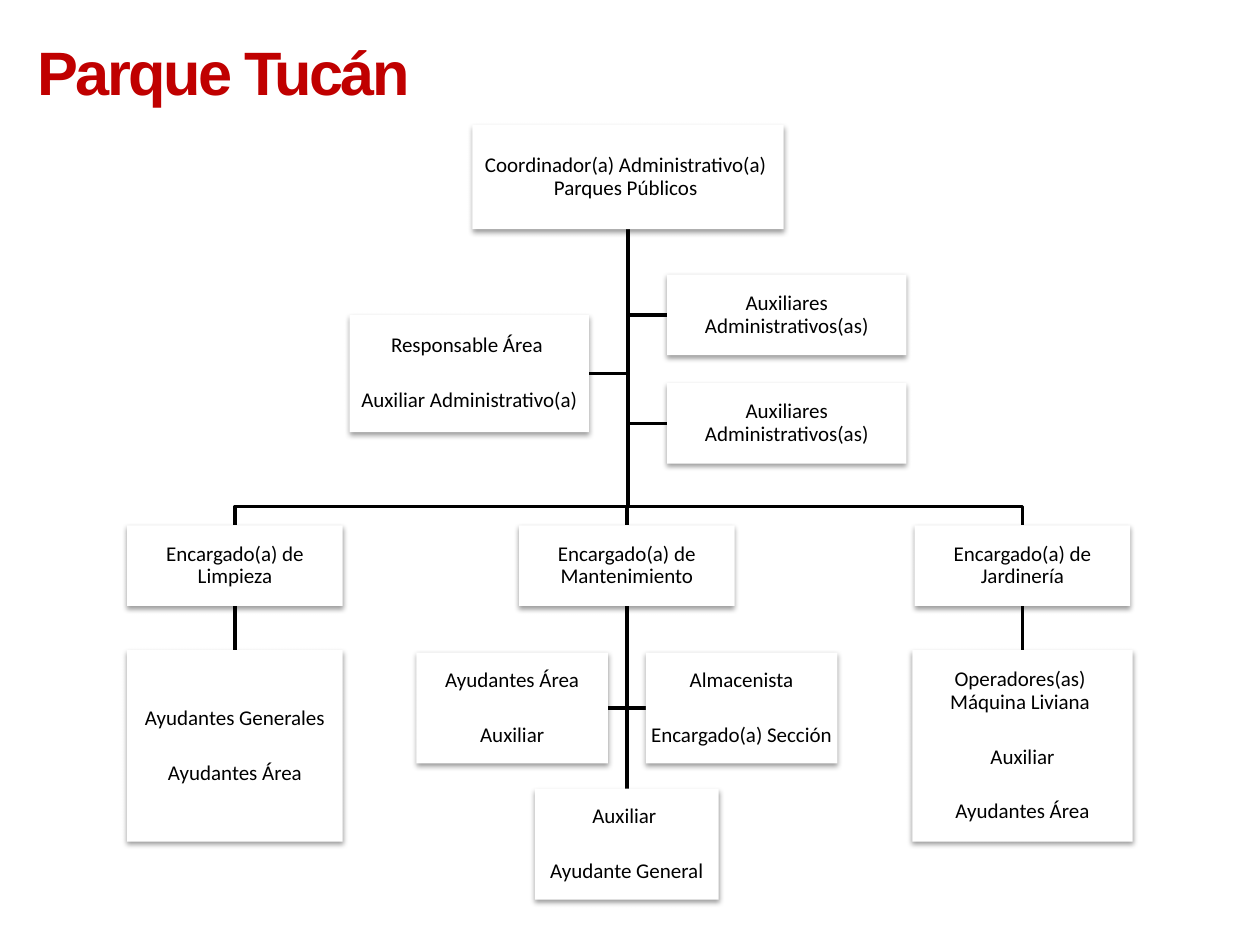
from dataclasses import dataclass

from lxml import etree
from pptx import Presentation
from pptx.dml.color import RGBColor
from pptx.enum.shapes import MSO_CONNECTOR, MSO_SHAPE
from pptx.enum.text import MSO_ANCHOR, PP_ALIGN
from pptx.oxml import parse_xml
from pptx.oxml.ns import nsdecls, qn
from pptx.util import Inches, Pt

RECT = MSO_SHAPE.RECTANGLE
LINE = MSO_CONNECTOR.STRAIGHT
MIDDLE = MSO_ANCHOR.MIDDLE
CENTER = PP_ALIGN.CENTER


@dataclass(frozen=True)
class Theme:
    red: RGBColor = RGBColor(0xC0, 0x00, 0x00)
    ink: RGBColor = RGBColor(0x00, 0x00, 0x00)
    paper: RGBColor = RGBColor(0xFF, 0xFF, 0xFF)
    head: Pt = Pt(35)
    body: Pt = Pt(12)
    rule: Pt = Pt(2)
    gap: Pt = Pt(18.3)


THEME = Theme()
ROOT = (3.75, 0.99, 2.47, 0.83)
BUS = 4.02
TOP = 4.17
SHADE = (
    f'<a:effectLst {nsdecls("a")}>'
    '<a:outerShdw blurRad="39400" dist="20300" dir="5400000" rotWithShape="0">'
    '<a:srgbClr val="000000"><a:alpha val="38000"/></a:srgbClr>'
    '</a:outerShdw></a:effectLst>'
)


def title(slide, box, text):
    frame = slide.shapes.add_textbox(*map(Inches, box)).text_frame
    frame.word_wrap = True
    frame.text = text
    run = frame.paragraphs[0].runs[0]
    run.font.name = "Arial"
    run.font.size = THEME.head
    run.font.bold = True
    run.font.color.rgb = THEME.red
    run._r.get_or_add_rPr().set("spc", "-150")


def ink(line):
    line.color.rgb = THEME.ink
    line.width = THEME.rule


def link(slide, *ends):
    line = slide.shapes.add_connector(LINE, *map(Inches, ends))
    ink(line.line)
    etree.SubElement(line._element.spPr, qn("a:effectLst"))


def elbow(slide, *spots):
    first, *rest = [tuple(map(Inches, spot)) for spot in spots]
    pen = slide.shapes.build_freeform(*first)
    pen.add_line_segments(rest, close=False)
    shape = pen.convert_to_shape()
    shape.fill.background()
    shape.shadow.inherit = False
    ink(shape.line)


def foot(box):
    left, top, width, height = box
    return left + width / 2, top + height


def card(slide, box, text):
    shape = slide.shapes.add_shape(RECT, *map(Inches, box))
    shape.fill.solid()
    shape.fill.fore_color.rgb = THEME.paper
    shape.line.fill.background()
    shape._element.spPr.append(parse_xml(SHADE))
    frame = shape.text_frame
    frame.word_wrap = True
    frame.vertical_anchor = MIDDLE
    frame.margin_left = frame.margin_right = Inches(0.01)
    frame.margin_top = frame.margin_bottom = Inches(0.01)
    frame.text = text
    for spot, para in enumerate(frame.paragraphs):
        para.alignment = CENTER
        para.line_spacing = 0.9
        if spot:
            para.space_before = THEME.gap
        for run in para.runs:
            run.font.name = "Calibri"
            run.font.size = THEME.body
            run.font.color.rgb = THEME.ink


def unit(slide, box, text, gap=0, sides=(), base=None):
    mid, low = foot(box)
    for right, down, wide, tall, label in sides:
        x = mid + gap if right else mid - gap - wide
        y = low + down
        edge = x if right else x + wide
        half = y + tall / 2
        elbow(slide, (mid, low), (mid, half), (edge, half))
        card(slide, (x, y, wide, tall), label)
    if base:
        down, wide, tall, label = base
        link(slide, mid, low, mid, low + down)
        card(slide, (mid - wide / 2, low + down, wide, tall), label)
    card(slide, box, text)


def branch(slide, box, text, **parts):
    start, low = foot(ROOT)
    mid = foot(box)[0]
    elbow(slide, (start, low), (start, BUS), (mid, BUS), (mid, box[1]))
    unit(slide, box, text, **parts)


def main():
    deck = Presentation()
    deck.slide_width, deck.slide_height = Inches(10), Inches(7.5)
    slide = deck.slides.add_slide(deck.slide_layouts[6])
    title(slide, (0.2, 0.22, 3.54, 0.69), "Parque Tucán")

    size = (1.71, 0.64)
    branch(
        slide, (1.01, TOP, *size), "Encargado(a) de Limpieza",
        base=(0.35, 1.71, 1.52, "Ayudantes Generales\nAyudantes Área"),
    )
    branch(
        slide, (4.12, TOP, *size), "Encargado(a) de Mantenimiento", gap=0.15,
        sides=[
            (False, 0.37, 1.52, 0.88, "Ayudantes Área\nAuxiliar"),
            (True, 0.37, 1.52, 0.88, "Almacenista\nEncargado(a) Sección"),
        ],
        base=(1.45, 1.46, 0.88, "Auxiliar \nAyudante General"),
    )
    branch(
        slide, (7.26, TOP, *size), "Encargado(a) de Jardinería",
        base=(0.35, 1.75, 1.52, "Operadores(as) \vMáquina Liviana \nAuxiliar\nAyudantes Área"),
    )

    aides = "Auxiliares Administrativos(as)"
    unit(
        slide, ROOT, "Coordinador(a) Administrativo(a) \vParques Públicos ", gap=0.31,
        sides=[
            (True, 0.36, 1.9, 0.64, aides),
            (True, 1.22, 1.9, 0.64, aides),
            (False, 0.68, 1.9, 0.93, "Responsable Área \nAuxiliar Administrativo(a)"),
        ],
    )
    deck.save("out.pptx")


if __name__ == "__main__":
    main()
